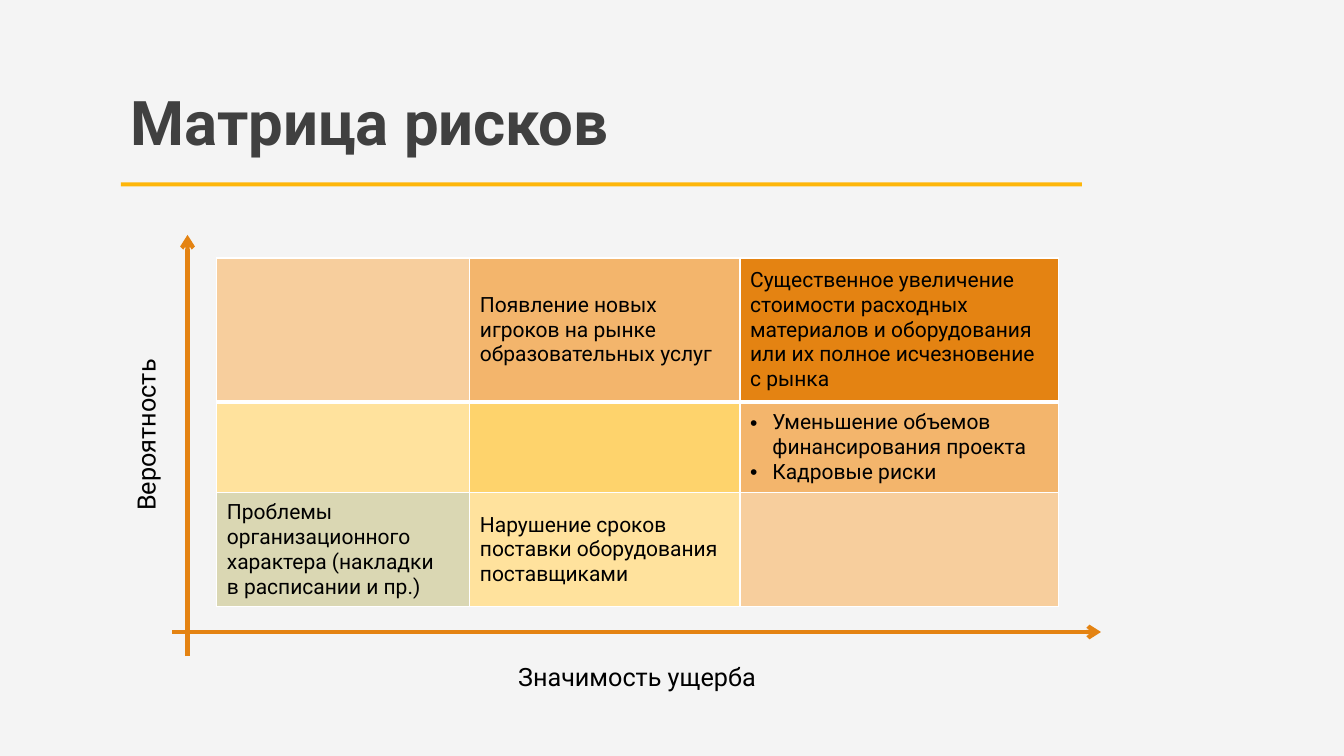
import dataclasses

import lxml.etree
import pptx
import pptx.dml.color
import pptx.enum.shapes
import pptx.enum.text
import pptx.oxml.ns
import pptx.util

PX = 9144  # EMU in one px, 100 px to the inch


@dataclasses.dataclass(frozen=True)
class Theme:
    font: str = "Roboto"
    background: str = "F4F4F4"
    heading: str = "404040"
    text: str = "000000"
    rule: str = "FEB60A"
    axis: str = "E48312"
    border: str = "FFFFFF"
    title_size: int = 44
    label_size: int = 18
    cell_size: int = 15
    axis_width: int = 3
    thin_border: int = 1
    thick_border: int = 3


THEME = Theme()

LOW, MINOR, MEDIUM = "DAD7B3", "FFE29D", "FED36C"
RAISED, HIGH, CRITICAL = "F7CE9D", "F3B56C", "E48312"

# Rows run from high to low probability, columns from low to high damage
RISKS = [
    [
        (RAISED, []),
        (HIGH, ["Появление новых игроков на рынке образовательных услуг"]),
        (CRITICAL, ["Существенное увеличение стоимости расходных материалов "
                    "и оборудования или их полное исчезновение с рынка"]),
    ],
    [
        (MINOR, []),
        (MEDIUM, []),
        (HIGH, ["Уменьшение объемов финансирования проекта", "Кадровые риски"]),
    ],
    [
        (LOW, ["Проблемы организационного характера (накладки \nв расписании и пр.)"]),
        (MINOR, ["Нарушение сроков поставки оборудования поставщиками"]),
        (RAISED, []),
    ],
]
COLUMN_WIDTHS = [251, 268, 316]
ROW_HEIGHTS = [143, 90, 113]


def emu(*lengths):
    return [pptx.util.Emu(length * PX) for length in lengths]


def rgb(value):
    return pptx.dml.color.RGBColor.from_string(value)


def sub(parent, tag, **attributes):
    return lxml.etree.SubElement(parent, pptx.oxml.ns.qn(tag), attributes)


def style_paragraph(paragraph, size, color=THEME.text, bold=False):
    for run in paragraph.runs:
        run.font.name = THEME.font
        run.font.size = pptx.util.Pt(size)
        run.font.color.rgb = rgb(color)
        run.font.bold = bold


def add_label(slide, box, text, size, color=THEME.text, bold=False):
    label = slide.shapes.add_textbox(*emu(*box))
    label.text_frame.word_wrap = True
    label.text_frame.text = text
    style_paragraph(label.text_frame.paragraphs[0], size, color, bold)
    return label


def add_heading(slide, box):
    left, top, width, height = box
    rule_height, title_height = 4, 131
    # Title
    title = add_label(slide, (left, top, 767, title_height), "Матрица рисков",
                      THEME.title_size, THEME.heading, True)
    title.text_frame.vertical_anchor = pptx.enum.text.MSO_ANCHOR.BOTTOM
    title.text_frame.paragraphs[0].line_spacing = 0.85
    # Rule below the title
    rule = slide.shapes.add_shape(
        pptx.enum.shapes.MSO_SHAPE.RECTANGLE,
        *emu(left, top + height - rule_height, width, rule_height))
    rule.shadow.inherit = False
    rule.fill.solid()
    rule.fill.fore_color.rgb = rgb(THEME.rule)
    rule.line.fill.background()


def add_bullet(paragraph):
    indent = 22 * PX
    properties = paragraph._p.get_or_add_pPr()
    properties.set("marL", str(indent))
    properties.set("indent", str(-indent))
    sub(properties, "a:buFont", typeface="Arial")
    sub(properties, "a:buChar", char="•")


def set_borders(cell, row):
    top = THEME.thick_border if row == 1 else THEME.thin_border
    bottom = THEME.thick_border if row == 0 else THEME.thin_border
    sides = {"a:lnL": THEME.thin_border, "a:lnR": THEME.thin_border,
             "a:lnT": top, "a:lnB": bottom}
    for side, width in sides.items():
        border = sub(cell._tc.get_or_add_tcPr(), side, w=str(pptx.util.Pt(width)))
        sub(sub(border, "a:solidFill"), "a:srgbClr", val=THEME.border)


def fill_cell(cell, row, color, risks):
    set_borders(cell, row)
    cell.fill.solid()
    cell.fill.fore_color.rgb = rgb(color)
    cell.vertical_anchor = pptx.enum.text.MSO_ANCHOR.MIDDLE
    for index, risk in enumerate(risks):
        frame = cell.text_frame
        paragraph = frame.add_paragraph() if index else frame.paragraphs[0]
        paragraph.text = risk
        if len(risks) > 1:
            add_bullet(paragraph)
        style_paragraph(paragraph, THEME.cell_size)


def add_matrix(slide, box):
    matrix = slide.shapes.add_table(len(RISKS), len(RISKS[0]), *emu(*box)).table
    matrix.first_row = False
    matrix.horz_banding = False
    for column, width in zip(matrix.columns, emu(*COLUMN_WIDTHS)):
        column.width = width
    for row, height in zip(matrix.rows, emu(*ROW_HEIGHTS)):
        row.height = height
    for row, levels in enumerate(RISKS):
        for column, (color, risks) in enumerate(levels):
            fill_cell(matrix.cell(row, column), row, color, risks)


def add_arrow(slide, *ends):
    arrow = slide.shapes.add_connector(
        pptx.enum.shapes.MSO_CONNECTOR.STRAIGHT, *emu(*ends))
    arrow.line.color.rgb = rgb(THEME.axis)
    arrow.line.width = pptx.util.Pt(THEME.axis_width)
    sub(arrow.line._get_or_add_ln(), "a:tailEnd", type="arrow")
    sub(arrow._element.spPr, "a:effectLst")


def add_axes(slide, box):
    left, top, width, height = box
    right, bottom = left + width, top + height
    origin_x, origin_y = left + 15, bottom - 24
    # Axis names
    probability = add_label(slide, (left - 133, top + 157, 213, 40),
                            "Вероятность", THEME.label_size)
    probability.rotation = 270
    add_label(slide, (left + 333, bottom, 362, 40), "Значимость ущерба", THEME.label_size)
    # Axis arrows
    add_arrow(slide, origin_x, bottom, origin_x, top)
    add_arrow(slide, left, origin_y, right, origin_y)


def main():
    deck = pptx.Presentation()
    deck.slide_width, deck.slide_height = emu(1333, 750)
    slide = deck.slides.add_slide(deck.slide_layouts[6])
    slide.background.fill.solid()
    slide.background.fill.fore_color.rgb = rgb(THEME.background)
    add_heading(slide, (120, 31, 953, 154))
    add_matrix(slide, (215, 256, sum(COLUMN_WIDTHS), sum(ROW_HEIGHTS)))
    add_axes(slide, (171, 233, 921, 418))
    deck.save("out.pptx")


if __name__ == "__main__":
    main()
